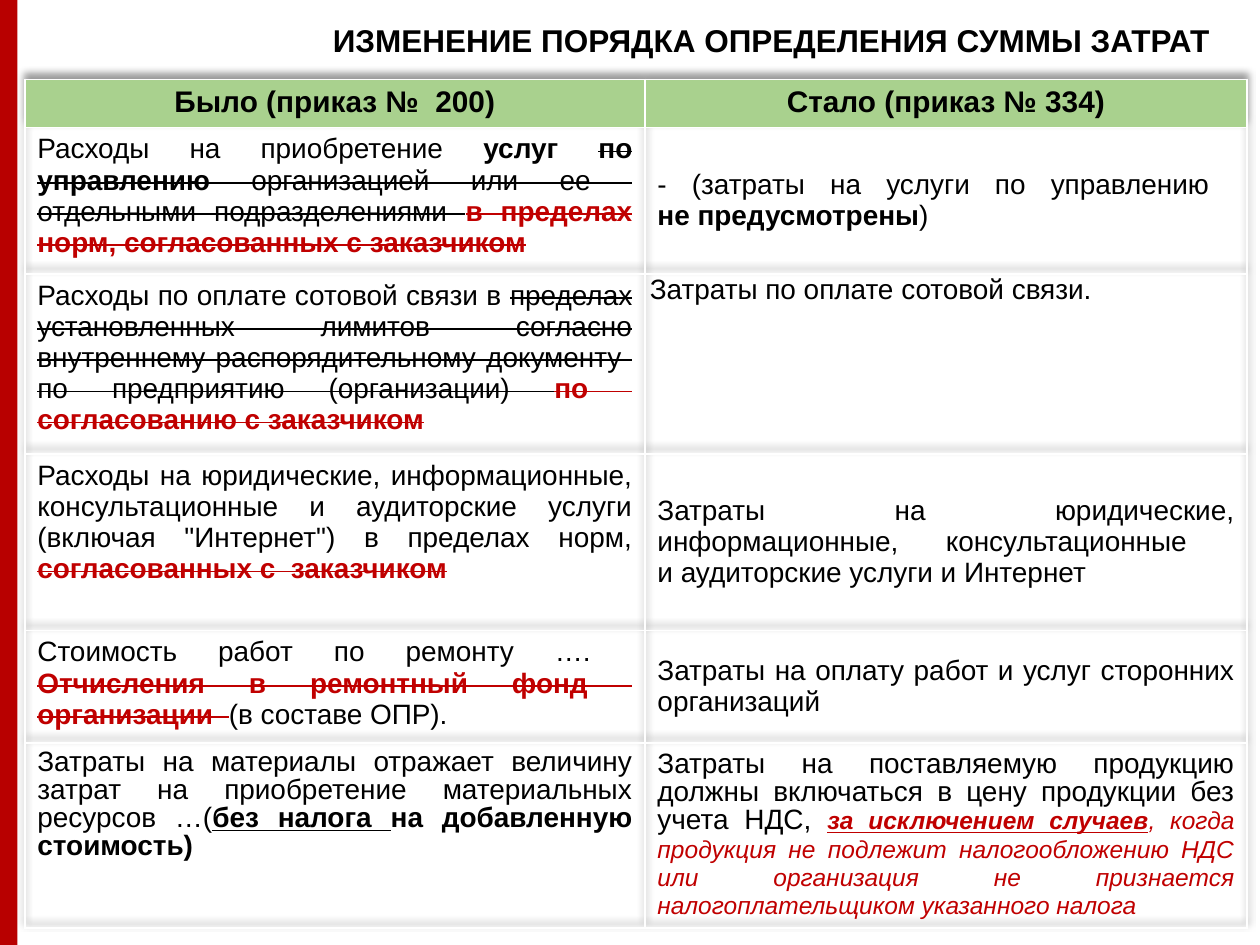
from lxml import etree
from pptx import Presentation
from pptx.dml.color import RGBColor
from pptx.enum.shapes import MSO_SHAPE
from pptx.enum.text import MSO_ANCHOR, MSO_AUTO_SIZE, PP_ALIGN
from pptx.oxml import parse_xml
from pptx.util import Cm, Pt

RECTANGLE = MSO_SHAPE.RECTANGLE
TOP, MIDDLE = MSO_ANCHOR.TOP, MSO_ANCHOR.MIDDLE
CENTER, JUSTIFY, LEFT = PP_ALIGN.CENTER, PP_ALIGN.JUSTIFY, PP_ALIGN.LEFT
NO_RESIZE = MSO_AUTO_SIZE.NONE
DRAWING = "http://schemas.openxmlformats.org/drawingml/2006/main"
FONT = "Arial"
COLORS = {"bar": "B80000", "header": "A9D18E", "border": "FFFFFF",
          "text": "000000", "accent": "C00000", "shadow": "000000"}

TITLE = "ИЗМЕНЕНИЕ ПОРЯДКА ОПРЕДЕЛЕНИЯ СУММЫ ЗАТРАТ"
HEADERS = ["Было (приказ №  200)", "Стало (приказ № 334)"]
COLUMN_WIDTHS = [12.5, 12.14]
ROW_HEIGHTS = [0.97, 2.95, 3.63, 3.56, 2.27, 3.73]
ROWS = [
    ([("Расходы на приобретение ", ""), ("услуг ", "bold"),
      ("по управлению", "bold strike"),
      (" организацией или ее  отдельными подразделениями ", "strike"),
      ("в пределах норм, согласованных с заказчиком", "bold strike accent")],
     [("- (затраты на услуги по управлению \n", ""),
      ("не предусмотрены", "bold"), (")", "")]),
    ([("Расходы по оплате сотовой связи в ", ""),
      ("пределах установленных лимитов согласно внутреннему "
       "распорядительному документу  по предприятию (организации) ", "strike"),
      ("по  согласованию с заказчиком", "bold strike accent")],
     [("Затраты по оплате сотовой связи.", "")]),
    ([("Расходы на юридические, информационные, консультационные и аудиторские "
       "услуги (включая \"Интернет\") в пределах норм, ", ""),
      ("согласованных с  заказчиком", "bold strike accent")],
     [("Затраты на юридические, информационные, консультационные \n"
       "и аудиторские услуги и Интернет", "")]),
    ([("Стоимость работ по ремонту ….  ", ""),
      ("Отчисления в ремонтный фонд  организации  ", "bold strike accent"),
      ("(в составе ОПР).", "")],
     [("Затраты на оплату работ и услуг сторонних организаций", "")]),
    ([("Затраты на материалы отражает величину затрат на приобретение "
       "материальных ресурсов …(", ""),
      ("без налога ", "bold underline"), ("на добавленную стоимость)", "bold")],
     [("Затраты на поставляемую продукцию должны включаться в цену продукции "
       "без учета НДС, ", ""),
      ("за исключением случаев", "bold italic underline accent small"),
      (", когда продукция не подлежит налогообложению НДС или организация "
       "не признается налогоплательщиком указанного налога ",
       "italic accent small")]),
]


def add_run(paragraph, text, style="", size=16):
    """Add text with the styles named in a space-separated string."""
    styles = style.split()
    for index, line in enumerate(text.split("\n")):
        if index:
            paragraph.add_line_break()
        if not line:
            continue
        run = paragraph.add_run()
        run.text = line
        font = run.font
        font.name = FONT
        font.size = Pt(14 if "small" in styles else size)
        font.bold = "bold" in styles
        font.italic = "italic" in styles
        font.underline = "underline" in styles
        color = "accent" if "accent" in styles else "text"
        font.color.rgb = RGBColor.from_string(COLORS[color])
        if "strike" in styles:
            run._r.get_or_add_rPr().set("strike", "sngStrike")


def add_side_bar(slide, left, top, width, height):
    """Draw the red bar along the left edge."""
    bar = slide.shapes.add_shape(RECTANGLE, left, top, width, height)
    bar.shadow.inherit = False
    bar.fill.solid()
    bar.fill.fore_color.rgb = RGBColor.from_string(COLORS["bar"])
    bar.line.fill.background()


def add_title(slide, left, top, width, height):
    """Place and format the title placeholder."""
    title = slide.shapes.title
    title.left, title.top, title.width, title.height = left, top, width, height
    frame = title.text_frame
    frame.word_wrap = True
    frame.auto_size = NO_RESIZE
    frame.vertical_anchor = TOP
    paragraph = frame.paragraphs[0]
    paragraph.alignment = CENTER
    add_run(paragraph, TITLE, "bold", 18)


def format_cell(cell, fill=None):
    """Give a cell white borders and an optional fill."""
    properties = cell._tc.get_or_add_tcPr()
    for side in ("lnL", "lnR", "lnT", "lnB"):
        properties.append(parse_xml(
            f'<a:{side} xmlns:a="{DRAWING}" w="12700"><a:solidFill>'
            f'<a:srgbClr val="{COLORS["border"]}"/></a:solidFill></a:{side}>'))
    if fill:
        cell.fill.solid()
        cell.fill.fore_color.rgb = RGBColor.from_string(fill)
    else:
        cell.fill.background()


def add_table_shadow(table):
    """Cast a soft shadow upwards from the table."""
    properties = table._tbl.tblPr
    effects = etree.fromstring(
        f'<a:effectLst xmlns:a="{DRAWING}">'
        '<a:outerShdw blurRad="50800" dist="38100" dir="16200000" '
        f'rotWithShape="0"><a:srgbClr val="{COLORS["shadow"]}">'
        '<a:alpha val="40000"/></a:srgbClr></a:outerShdw></a:effectLst>')
    properties.insert(0, effects)


def add_comparison(slide, left, top, width, height):
    """Build the two-column table of old and new rules."""
    table = slide.shapes.add_table(
        len(ROW_HEIGHTS), len(COLUMN_WIDTHS), left, top, width, height).table
    table.first_row = False
    table.horz_banding = False
    add_table_shadow(table)
    for column, column_width in zip(table.columns, COLUMN_WIDTHS):
        column.width = Cm(column_width)
    for row, row_height in zip(table.rows, ROW_HEIGHTS):
        row.height = Cm(row_height)

    for index, text in enumerate(HEADERS):
        cell = table.cell(0, index)
        format_cell(cell, COLORS["header"])
        paragraph = cell.text_frame.paragraphs[0]
        paragraph.alignment = CENTER
        add_run(paragraph, text, "bold", 17)
    table.cell(0, 1).vertical_anchor = MIDDLE
    table.cell(0, 1).text_frame.paragraphs[0].line_spacing = Pt(18)

    for row_index, row in enumerate(ROWS, start=1):
        for column_index, runs in enumerate(row):
            cell = table.cell(row_index, column_index)
            format_cell(cell)
            cell.vertical_anchor = MIDDLE if column_index else TOP
            paragraph = cell.text_frame.paragraphs[0]
            paragraph.alignment = JUSTIFY
            if row_index == len(ROWS):
                paragraph.line_spacing = Pt(16)
            for text, style in runs:
                add_run(paragraph, text, style)

    phone_cell = table.cell(2, 1)
    phone_cell.vertical_anchor = TOP
    phone_cell.margin_left, phone_cell.margin_right = Cm(0.1), Cm(0.03)
    phone_cell.margin_top = phone_cell.margin_bottom = 0
    phone_cell.text_frame.paragraphs[0].alignment = LEFT


def main():
    """Create the presentation with its single slide."""
    presentation = Presentation()
    presentation.slide_width, presentation.slide_height = Cm(25.4), Cm(19.05)
    slide = presentation.slides.add_slide(presentation.slide_layouts[5])
    add_side_bar(slide, Cm(-0.03), 0, Cm(0.38), presentation.slide_height)
    add_title(slide, Cm(5.8), Cm(0.3), Cm(19.5), Cm(1.2))
    add_comparison(slide, Cm(0.5), Cm(1.6),
                   Cm(sum(COLUMN_WIDTHS)), Cm(sum(ROW_HEIGHTS)))
    presentation.save("out.pptx")


if __name__ == "__main__":
    main()
